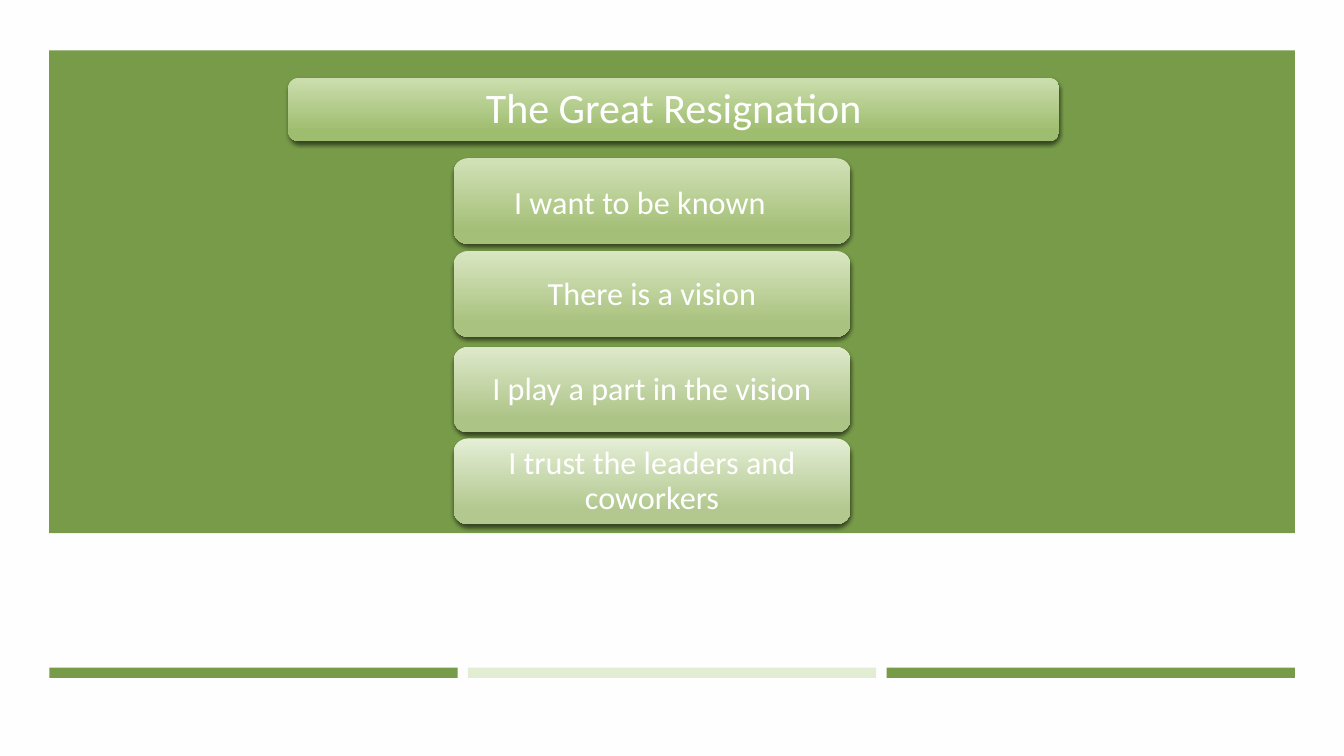
from lxml import etree
from pptx import Presentation
from pptx.dml.color import RGBColor
from pptx.enum.shapes import MSO_SHAPE
from pptx.enum.text import MSO_ANCHOR, MSO_AUTO_SIZE, PP_ALIGN
from pptx.oxml.ns import qn
from pptx.util import Pt

RECTANGLE = MSO_SHAPE.RECTANGLE
ROUNDED = MSO_SHAPE.ROUNDED_RECTANGLE
MIDDLE = MSO_ANCHOR.MIDDLE
CENTER = PP_ALIGN.CENTER
NO_AUTOFIT = MSO_AUTO_SIZE.NONE

# Content
TITLE = "The Great Resignation"
TITLE_GRADIENT = ("CCDEAF", "9FBD6F")
# text, top, gradient, text shift (left, down)
REASONS = [
    ("I want to be known", 113, ("D2E2B8", "A4BF77"), (8.6, 2.2)),
    ("There is a vision", 179.3, ("D9E6C2", "A9C27F"), (0, 0.7)),
    ("I play a part in the vision", 247.7, ("DEE9CB", "ADC487"), (0, 0)),
    ("I trust the leaders and coworkers", 313.2, ("E4EED5", "B2C88F"), (0, 0)),
]

THEME = {
    "font": "Calibri", "title_size": 30, "reason_size": 23,
    "background": "FFFEFF", "panel": "779B49", "pale": "E3EDD3",
    "text": "FFFFFF", "shadow": "000000",
}

# Layout, in points
SLIDE_WIDTH, SLIDE_HEIGHT = 960, 540
PANEL = (35.2, 36, 889.8, 344.8)
TITLE_CARD = (205.9, 55.6, 546.8 + 4, 45.2)
CARD_LEFT, CARD_WIDTH, CARD_HEIGHT = 324, 283.6, 61.2
BAR_TOP, BAR_HEIGHT, BAR_GAP = 476.8, 7.4, 7.4
BAR_COLORS = [THEME["panel"], THEME["pale"], THEME["panel"]]


def color(name):
    return RGBColor.from_string(name)


def set_values(target, values):
    for name, value in values.items():
        setattr(target, name, value)


def add_block(slide, kind, box):
    shape = slide.shapes.add_shape(kind, *map(Pt, box))
    shape.shadow.inherit = False
    shape.line.fill.background()
    return shape


def add_rectangle(slide, box, fill):
    shape = add_block(slide, RECTANGLE, box)
    shape.fill.solid()
    shape.fill.fore_color.rgb = color(fill)


def add_card(slide, box, gradient):
    shape = add_block(slide, ROUNDED, box)
    shape.fill.gradient()
    shape.fill.gradient_angle = 270
    for stop, position, shade in zip(shape.fill.gradient_stops, (0, 0.84), gradient):
        stop.position = position
        stop.color.rgb = color(shade)
    # Soft shadow straight below the card
    effects = shape._element.spPr.find(qn("a:effectLst"))
    shadow = etree.SubElement(effects, qn("a:outerShdw"), blurRad=str(Pt(3)),
                              dist=str(Pt(2)), dir="5400000", algn="ctr", rotWithShape="0")
    shade = etree.SubElement(shadow, qn("a:srgbClr"), val=THEME["shadow"])
    etree.SubElement(shade, qn("a:alpha"), val="55000")
    return shape


def write_text(shape, text, size, insets):
    frame = shape.text_frame
    frame.text = text
    left, top, right, bottom = map(Pt, insets)
    set_values(frame, {
        "word_wrap": True, "auto_size": NO_AUTOFIT, "vertical_anchor": MIDDLE,
        "margin_left": left, "margin_top": top,
        "margin_right": right, "margin_bottom": bottom,
    })
    paragraph = frame.paragraphs[0]
    set_values(paragraph, {"alignment": CENTER, "line_spacing": 0.9,
                           "space_before": Pt(0), "space_after": Pt(0)})
    font = paragraph.runs[0].font
    set_values(font, {"name": THEME["font"], "size": Pt(size), "bold": False})
    font.color.rgb = color(THEME["text"])


def main():
    presentation = Presentation()
    set_values(presentation, {"slide_width": Pt(SLIDE_WIDTH),
                              "slide_height": Pt(SLIDE_HEIGHT)})
    slide = presentation.slides.add_slide(presentation.slide_layouts[5])
    background = slide.background.fill
    background.solid()
    background.fore_color.rgb = color(THEME["background"])

    # Green panel and the three bars below it
    add_rectangle(slide, PANEL, THEME["panel"])
    panel_left, _, panel_width, _ = PANEL
    count = len(BAR_COLORS)
    bar_width = (panel_width - (count - 1) * BAR_GAP) / count
    for index, fill in enumerate(BAR_COLORS):
        left = panel_left + index * (bar_width + BAR_GAP)
        add_rectangle(slide, (left, BAR_TOP, bar_width, BAR_HEIGHT), fill)

    # Title on its card, brought to the front
    card = add_card(slide, TITLE_CARD, TITLE_GRADIENT)
    title = slide.shapes.title
    set_values(title, {"left": card.left, "top": card.top,
                       "width": card.width, "height": card.height})
    write_text(title, TITLE, THEME["title_size"], (8.6, 4.3, 8.6, 4.3))
    slide.shapes._spTree.append(title._element)

    # Reason cards; uneven insets shift the text
    for text, top, gradient, (shift_left, shift_down) in REASONS:
        card = add_card(slide, (CARD_LEFT, top, CARD_WIDTH, CARD_HEIGHT), gradient)
        insets = (10, 4 + 2 * shift_down, 10 + 2 * shift_left, 4)
        write_text(card, text, THEME["reason_size"], insets)

    presentation.save("out.pptx")


if __name__ == "__main__":
    main()
